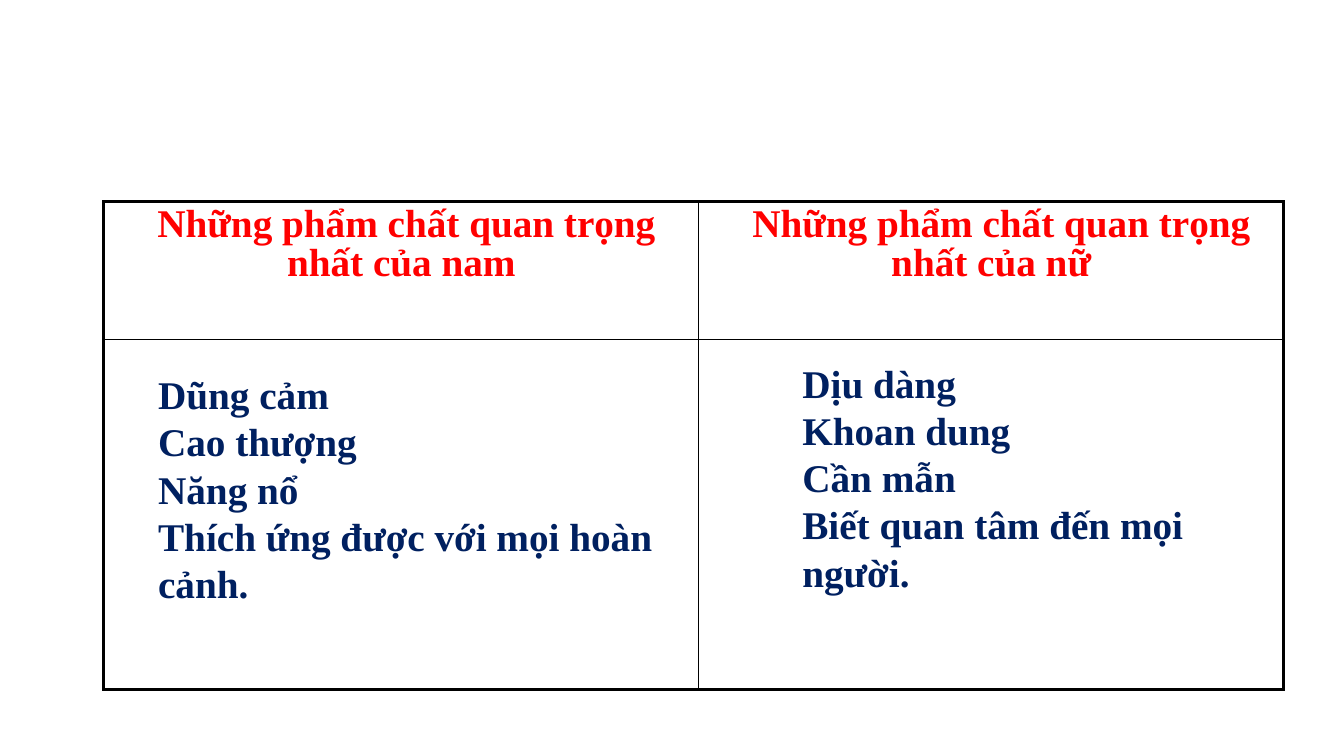
from lxml import etree
from pptx import Presentation
from pptx import util as u
from pptx.dml.color import RGBColor
from pptx.enum import text
from pptx.oxml.ns import qn

COLORS = {"heading": "FF0000", "quality": "002060", "border": "000000"}
FONT = "Times New Roman"
SIZE = 28
COLS = [5.9, 5.8]
ROWS = [1.37, 3.47]
HEADINGS = [
    ("Những phẩm chất quan trọng nhất của nam", 0.1),
    ("Những phẩm chất quan trọng nhất của nữ", 0.2),
]
MALE = ["Dũng cảm", "Cao thượng", "Năng nổ", "Thích ứng được với mọi hoàn cảnh."]
FEMALE = ["Dịu dàng", "Khoan dung", "Cần mẫn", "Biết quan tâm đến mọi người."]


def add_run(p, words, color):
    r = p.add_run()
    r.text = words
    r.font.name = FONT
    r.font.size = u.Pt(SIZE)
    r.font.bold = True
    r.font.color.rgb = RGBColor.from_string(COLORS[color])


def set_borders(cell, widths):
    tc_pr = cell._tc.get_or_add_tcPr()
    for i, (side, width) in enumerate(widths.items()):
        ln = etree.Element(qn("a:ln" + side), w=str(u.Pt(width)))
        fill = etree.SubElement(ln, qn("a:solidFill"))
        etree.SubElement(fill, qn("a:srgbClr"), val=COLORS["border"])
        tc_pr.insert(i, ln)


def add_heading(cell, words, indent):
    p = cell.text_frame.paragraphs[0]
    p.alignment = text.PP_ALIGN.CENTER
    p.line_spacing = 0.9
    p.space_before = u.Pt(0.2 * SIZE)
    p._p.get_or_add_pPr().set("indent", str(u.Inches(indent)))
    add_run(p, words, "heading")


def add_grid(slide, left, top):
    box = [u.Inches(n) for n in (left, top, sum(COLS), sum(ROWS))]
    table = slide.shapes.add_table(len(ROWS), len(COLS), *box).table
    table.first_row = table.horz_banding = False
    for col, width in zip(table.columns, COLS):
        col.width = u.Inches(width)
    for i, height in enumerate(ROWS):
        table.rows[i].height = u.Inches(height)
        for j in range(len(COLS)):
            cell = table.cell(i, j)
            cell.fill.background()
            cell.margin_left = cell.margin_right = u.Inches(0.13)
            outer = {"L": j == 0, "R": j == len(COLS) - 1,
                     "T": i == 0, "B": i == len(ROWS) - 1}
            set_borders(cell, {s: 2.25 if edge else 1 for s, edge in outer.items()})
    for j, (words, indent) in enumerate(HEADINGS):
        add_heading(table.cell(0, j), words, indent)


def add_qualities(slide, lines, left, top, width, height):
    box = [u.Inches(n) for n in (left, top, width, height)]
    tf = slide.shapes.add_textbox(*box).text_frame
    tf.word_wrap = True
    tf.vertical_anchor = text.MSO_ANCHOR.MIDDLE
    for i, line in enumerate(lines):
        p = tf.add_paragraph() if i else tf.paragraphs[0]
        add_run(p, line, "quality")


def build_comparison(slide, left, top):
    add_grid(slide, left, top)
    body = top + ROWS[0]
    add_qualities(slide, MALE, left + 0.44, body + 0.16, 5.31, 2.63)
    add_qualities(slide, FEMALE, left + COLS[0] + 0.93, body + 0.05, 4.88, 2.63)


def main():
    prs = Presentation()
    prs.slide_width, prs.slide_height = u.Inches(13.33), u.Inches(7.5)
    slide = prs.slides.add_slide(prs.slide_layouts[6])
    build_comparison(slide, 1.03, 2)
    prs.save("out.pptx")


if __name__ == "__main__":
    main()
